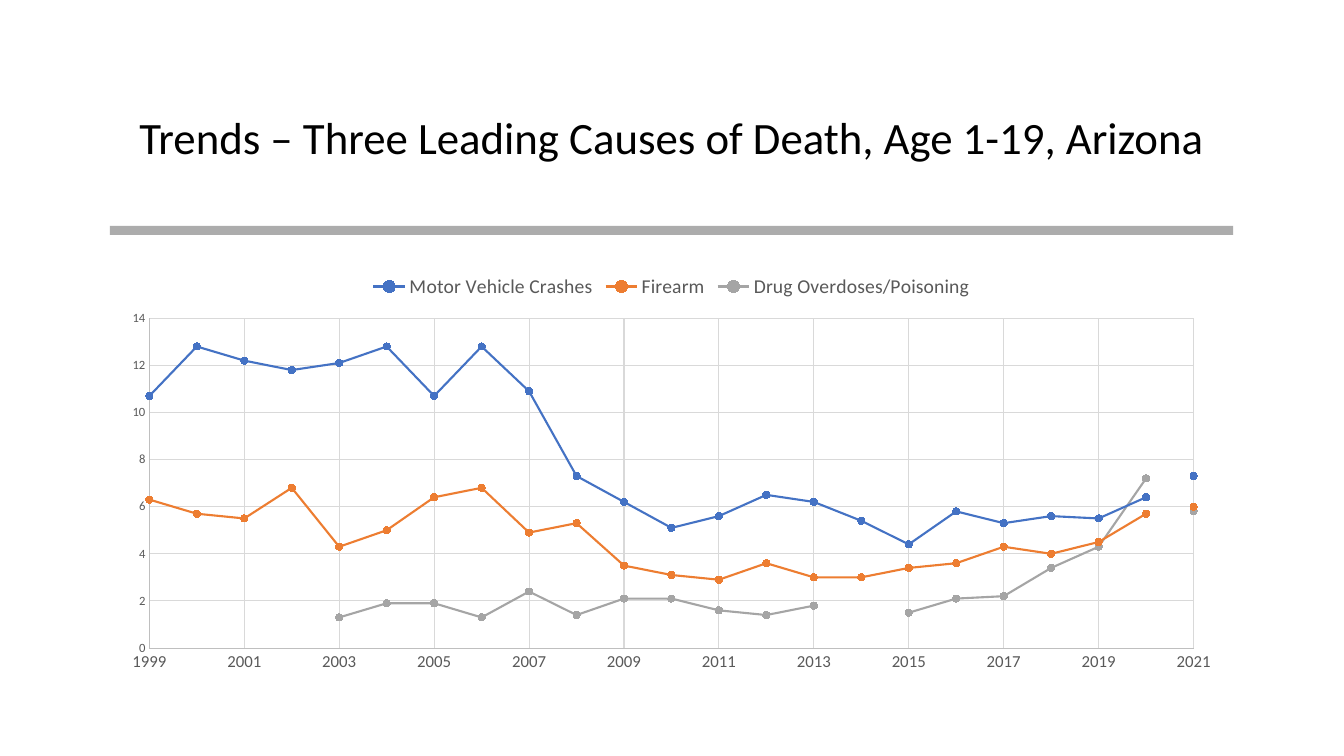
"""Build a slide charting three leading causes of death among young people in Arizona."""
from lxml.etree import SubElement
from pptx import Presentation
from pptx.chart.data import XyChartData
from pptx.dml.color import RGBColor
from pptx.enum.chart import XL_CHART_TYPE as ChartType
from pptx.enum.chart import XL_LEGEND_POSITION as LegendPosition
from pptx.enum.chart import XL_MARKER_STYLE as MarkerStyle
from pptx.enum.chart import XL_TICK_MARK as TickMark
from pptx.enum.shapes import MSO_SHAPE as Shape
from pptx.enum.text import MSO_ANCHOR as Anchor
from pptx.enum.text import PP_ALIGN as Align
from pptx.oxml.ns import qn
from pptx.util import Inches, Pt


def color(value):
    return RGBColor.from_string(value)


def style_font(font, size, value):
    font.name = "Calibri"
    font.size = Pt(size)
    font.bold = False
    font.color.rgb = color(value)


YEARS = [*range(1999, 2021), None, 2021]
CAUSES = [
    ("Motor Vehicle Crashes", "4472C4",
     [10.7, 12.8, 12.2, 11.8, 12.1, 12.8, 10.7, 12.8, 10.9, 7.3, 6.2, 5.1,
      5.6, 6.5, 6.2, 5.4, 4.4, 5.8, 5.3, 5.6, 5.5, 6.4, None, 7.3]),
    ("Firearm", "ED7D31",
     [6.3, 5.7, 5.5, 6.8, 4.3, 5, 6.4, 6.8, 4.9, 5.3, 3.5, 3.1,
      2.9, 3.6, 3, 3, 3.4, 3.6, 4.3, 4, 4.5, 5.7, None, 6]),
    ("Drug Overdoses/Poisoning", "A5A5A5",
     [None, None, None, None, 1.3, 1.9, 1.9, 1.3, 2.4, 1.4, 2.1, 2.1,
      1.6, 1.4, 1.8, None, 1.5, 2.1, 2.2, 3.4, 4.3, 7.2, None, 5.8]),
]
LEFT, WIDTH = Inches(1.09), Inches(11.14)

deck = Presentation()
deck.slide_width, deck.slide_height = Inches(13.33), Inches(7.5)
page = deck.slides.add_slide(deck.slide_layouts[5])

title = page.shapes.title
title.left, title.top = Inches(0.95), Inches(0.66)
title.width, title.height = Inches(11.43), Inches(1.45)
title.text_frame.vertical_anchor = Anchor.MIDDLE
para = title.text_frame.paragraphs[0]
para.alignment = Align.CENTER
para.line_spacing = 0.9
span = para.add_run()
span.text = "Trends – Three Leading Causes of Death, Age 1-19, Arizona"
style_font(span.font, 32, "000000")

divider = page.shapes.add_shape(Shape.RECTANGLE, LEFT, Inches(2.24), WIDTH, Inches(0.09))
divider.shadow.inherit = False
divider.fill.solid()
divider.fill.fore_color.rgb = color("808080")
divider.line.fill.background()
fill_color = divider.fill._xPr.find(qn("a:solidFill"))[0]
SubElement(fill_color, qn("a:alpha"), val="65000")

data = XyChartData()
for name, _, rates in CAUSES:
    cause = data.add_series(name)
    for year, rate in zip(YEARS, rates):
        cause.add_data_point(year, rate)
chart = page.shapes.add_chart(
    ChartType.XY_SCATTER_LINES, LEFT, Inches(2.61), WIDTH, Inches(4.14), data).chart
for point in chart.element.xpath('.//c:pt[c:v="None"]'):
    point.getparent().remove(point)

style_font(chart.font, 10, "000000")
chart.has_title = False
chart.has_legend = True
chart.legend.position = LegendPosition.TOP
chart.legend.include_in_layout = False
style_font(chart.legend.font, 14, "595959")
chart.plots[0].vary_by_categories = False

for axis, size, low, high in [(chart.category_axis, 12, 1999, 2021), (chart.value_axis, 9, 0, 14)]:
    axis.minimum_scale, axis.maximum_scale, axis.major_unit = low, high, 2
    axis.major_tick_mark = axis.minor_tick_mark = TickMark.NONE
    axis.tick_labels.number_format = "General"
    axis.tick_labels.number_format_is_linked = False
    style_font(axis.tick_labels.font, size, "595959")
    axis.has_major_gridlines = True
    for line, shade in [(axis.format.line, "BFBFBF"), (axis.major_gridlines.format.line, "D9D9D9")]:
        line.width = Pt(0.75)
        line.color.rgb = color(shade)

for series, (_, shade, _) in zip(chart.plots[0].series, CAUSES):
    series.smooth = False
    series.format.line.width = Pt(1.5)
    series.format.line.color.rgb = color(shade)
    series.marker.style = MarkerStyle.CIRCLE
    series.marker.size = 5
    series.marker.format.fill.solid()
    series.marker.format.fill.fore_color.rgb = color(shade)
    series.marker.format.line.color.rgb = color(shade)

deck.save("out.pptx")
